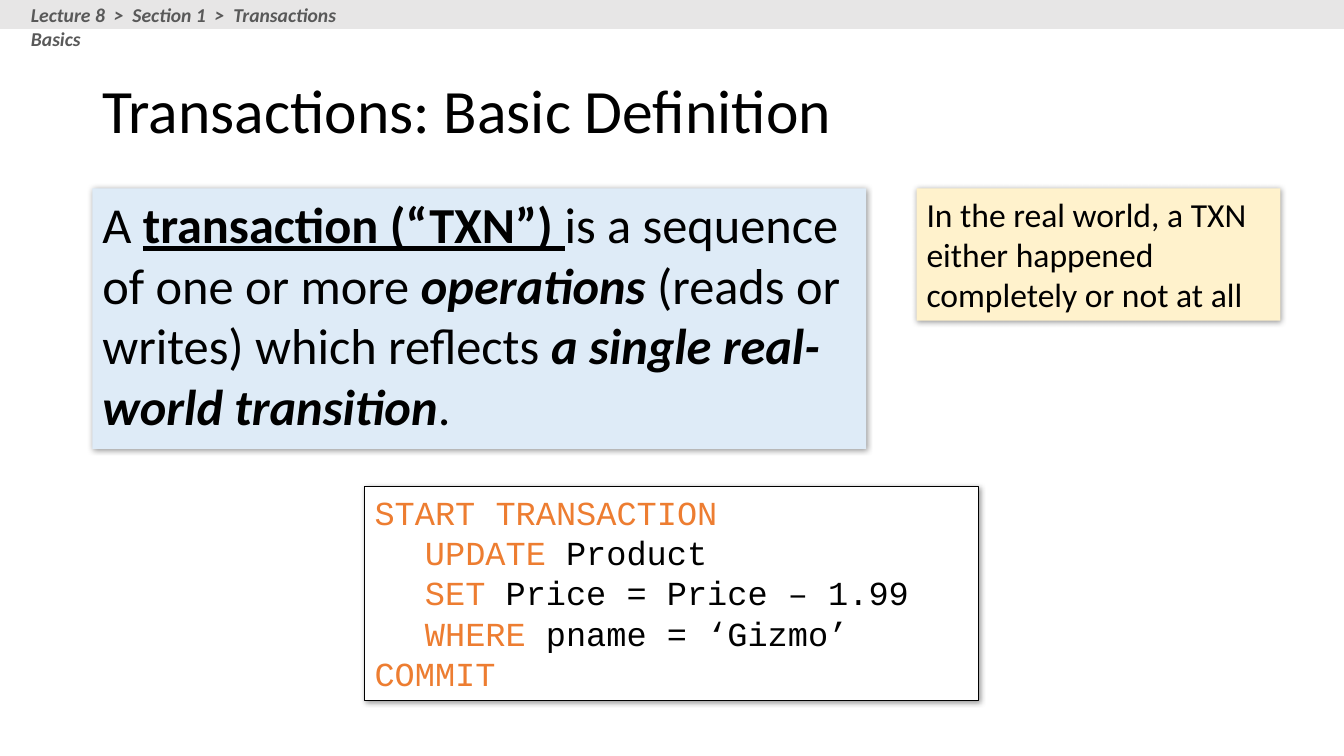
from lxml.etree import SubElement
from pptx import Presentation
from pptx.dml.color import RGBColor
from pptx.enum.shapes import MSO_SHAPE
from pptx.enum.text import MSO_ANCHOR, PP_ALIGN
from pptx.oxml.ns import qn
from pptx.util import Cm, Pt

COLORS = {
    "text": "000000", "keyword": "ED7D31", "breadcrumb": "595959",
    "bar": "E7E6E6", "definition": "DEEBF7", "code": "FFFFFF", "note": "FFF2CC",
}


def color(name):
    return RGBColor.from_string(COLORS[name])


def add_box(left, top, width, height, fill, shadow=True):
    box = slide.shapes.add_shape(
        MSO_SHAPE.RECTANGLE, Cm(left), Cm(top), Cm(width), Cm(height))
    box.fill.solid()
    box.fill.fore_color.rgb = color(fill)
    box.line.fill.background()
    box.shadow.inherit = False
    if shadow:
        effects = box._element.spPr.find(qn("a:effectLst"))
        outer = SubElement(effects, qn("a:outerShdw"), blurRad=str(Pt(4)),
                           dist=str(Pt(1)), dir=str(45 * 60000), rotWithShape="0")
        black = SubElement(outer, qn("a:srgbClr"), val=COLORS["text"])
        SubElement(black, qn("a:alpha"), val="40000")
    box.text_frame.word_wrap = True
    box.text_frame.vertical_anchor = MSO_ANCHOR.TOP
    return box


prs = Presentation()
prs.slide_width, prs.slide_height = Cm(33.87), Cm(19.05)
slide = prs.slides.add_slide(prs.slide_layouts[5])

# Title
title = slide.shapes.title
title.left, title.top, title.width, title.height = Cm(2.33), Cm(1.01), Cm(29.21), Cm(3.68)
title.text_frame.vertical_anchor = MSO_ANCHOR.MIDDLE
title.text_frame.text = "Transactions: Basic Definition"
heading = title.text_frame.paragraphs[0]
heading.line_spacing = 0.9

# Definition with emphasised terms: text, bold, italic, underline
definition = add_box(2.33, 4.75, 19.5, 6.56, "definition").text_frame.paragraphs[0]
for text, bold, italic, underline in [
    ("A ", False, False, False),
    ("transaction (“TXN”) ", True, False, True),
    ("is a sequence of one or more ", False, False, False),
    ("operations", True, True, False),
    (" (reads or writes) which reflects ", False, False, False),
    ("a single real-world transition", True, True, False),
    (".", False, False, False),
]:
    run = definition.add_run()
    run.text = text
    run.font.bold, run.font.italic, run.font.underline = bold, italic, underline

# SQL example: indent, keyword, rest of the line
code = add_box(9.19, 12.26, 15.47, 5.39, "code")
code.line.color.rgb = color("text")
code.line.width = Pt(0.75)
code.text_frame.word_wrap = False
code_lines = [
    ("", "START TRANSACTION", ""),
    ("\t", "UPDATE", " Product"),
    ("\t", "SET", " Price = Price – 1.99"),
    ("\t", "WHERE", " pname = ‘Gizmo’"),
    ("", "COMMIT", ""),
]
for number, (indent, keyword, rest) in enumerate(code_lines):
    line = code.text_frame.paragraphs[0] if number == 0 else code.text_frame.add_paragraph()
    for text, ink in [(indent + keyword, "keyword"), (rest, "text")]:
        if text:
            run = line.add_run()
            run.text = text
            run.font.color.rgb = color(ink)
    line.alignment = PP_ALIGN.LEFT
    line.font.name = "Courier New"
    line.font.size = Pt(24)

# Breadcrumb bar
add_box(0, 0, 33.87, 0.73, "bar", shadow=False)
breadcrumb_box = slide.shapes.add_textbox(Cm(0.53), Cm(-0.05), Cm(9.42), Cm(0.86))
breadcrumb_box.text_frame.word_wrap = True
breadcrumb = breadcrumb_box.text_frame.paragraphs[0]
breadcrumb.text = "Lecture 8  >  Section 1  >  Transactions Basics"
breadcrumb.font.bold = breadcrumb.font.italic = True

# Real-world note
note = add_box(23.1, 4.75, 9.17, 3.33, "note").text_frame.paragraphs[0]
note.text = "In the real world, a TXN either happened completely or not at all"

# Shared text format
for paragraph, size, ink in [
    (heading, 44, "text"), (definition, 36, "text"),
    (breadcrumb, 14, "breadcrumb"), (note, 24, "text"),
]:
    paragraph.alignment = PP_ALIGN.LEFT
    paragraph.font.name = "Calibri"
    paragraph.font.size = Pt(size)
    paragraph.font.color.rgb = color(ink)

prs.save("out.pptx")
